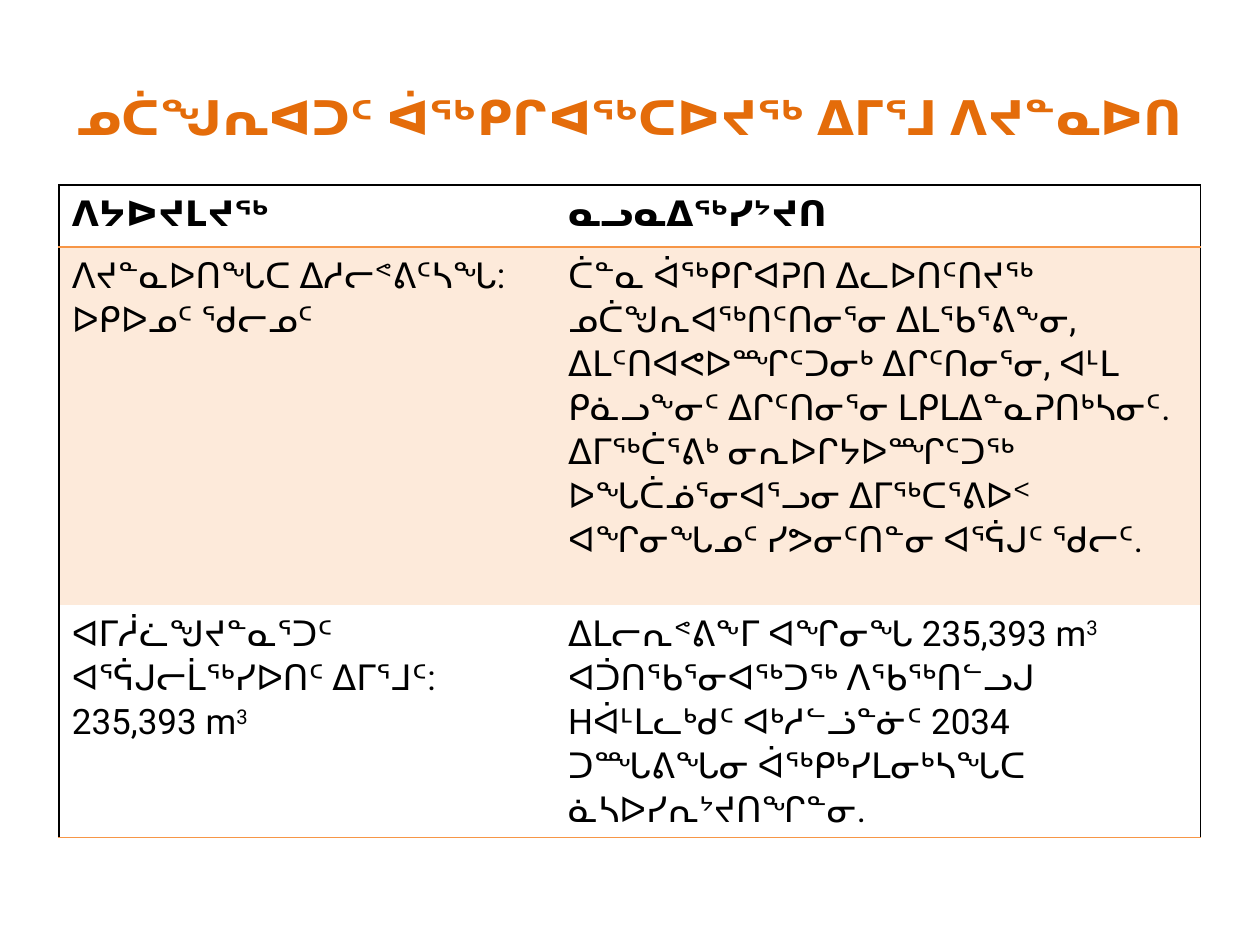
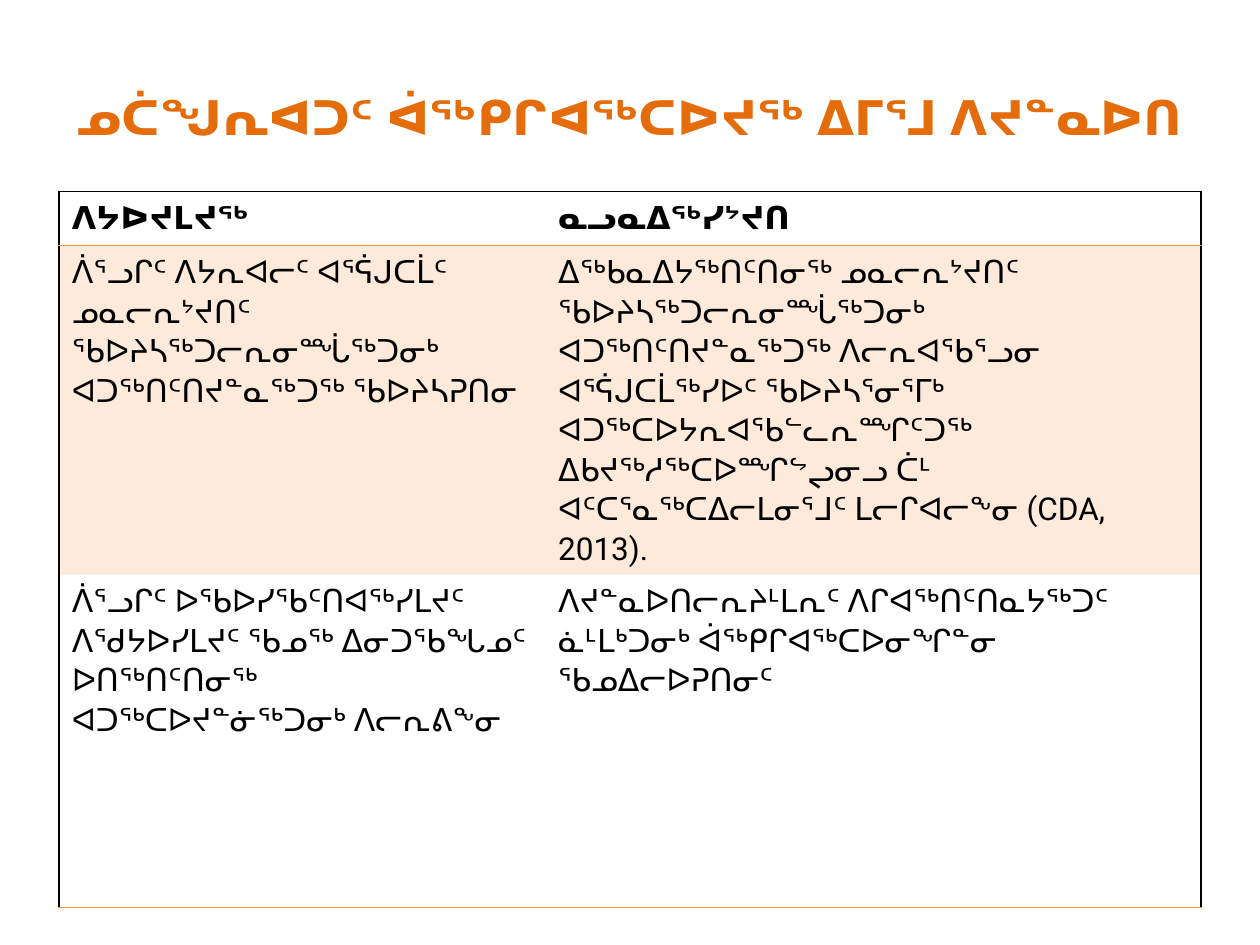
from lxml.etree import SubElement
from pptx import Presentation
from pptx.dml.color import RGBColor
from pptx.enum.text import MSO_ANCHOR, MSO_AUTO_SIZE, PP_ALIGN
from pptx.oxml import parse_xml
from pptx.oxml.ns import nsdecls, qn
from pptx.util import Inches, Pt

# Content: in a cell, every second part is superscript
TITLE = "ᓄᑖᖑᕆᐊᑐᑦ ᐋᖅᑭᒋᐊᖅᑕᐅᔪᖅ ᐃᒥᕐᒧ ᐱᔪᓐᓇᐅᑎ"
HEADER = (["ᐱᔭᐅᔪᒪᔪᖅ"], ["ᓇᓗᓇᐃᖅᓯᔾᔪᑎ"])
SLIDES = [
    {
        "top": 1.47, "size": 20, "cols": (3.94, 5.12), "heights": (0.49, 2.84, 1.79),
        "rows": [
            (["ᐱᔪᓐᓇᐅᑎᖓᑕ ᐃᓱᓕᕝᕕᑦᓴᖓ: ᐅᑭᐅᓄᑦ ᖁᓕᓄᑦ"],
             ["ᑖᓐᓇ ᐋᖅᑭᒋᐊᕈᑎ ᐃᓚᐅᑎᑦᑎᔪᖅ ᓄᑖᖑᕆᐊᖅᑎᑦᑎᓂᕐᓂ ᐃᒪᖃᕐᕕᖕᓂ, "
              "ᐃᒪᑦᑎᐊᕙᐅᙱᑦᑐᓂᒃ ᐃᒋᑦᑎᓂᕐᓂ, ᐊᒻᒪ ᑭᓈᓗᖕᓂᑦ ᐃᒋᑦᑎᓂᕐᓂ "
              "ᒪᑭᒪᐃᓐᓇᕈᑎᒃᓴᓂᑦ. ᐃᒥᖅᑖᕐᕕᒃ ᓂᕆᐅᒋᔭᐅᙱᑦᑐᖅ ᐅᖓᑖᓅᕐᓂᐊᕐᓗᓂ "
              "ᐃᒥᖅᑕᕐᕕᐅᑉ ᐊᖏᓂᖓᓄᑦ ᓯᕗᓂᑦᑎᓐᓂ ᐊᕐᕌᒍᑦ ᖁᓕᑦ."]),
            (["ᐊᒥᓲᓛᖑᔪᓐᓇᕐᑐᑦ ᐊᕐᕌᒍᓕᒫᖅᓯᐅᑎᑦ ᐃᒥᕐᒧᑦ: 235,393 m", "3"],
             ["ᐃᒪᓕᕆᕝᕕᖕᒥ ᐊᖏᓂᖓ 235,393 m", "3",
              " ᐊᑑᑎᖃᕐᓂᐊᖅᑐᖅ ᐱᖃᖅᑎᓪᓗᒍ Hᐋᒻᒪᓚᒃᑯᑦ ᐊᒃᓱᓪᓘᓐᓃᑦ 2034 "
              "ᑐᙵᕕᖓᓂ ᐋᖅᑭᒃᓯᒪᓂᒃᓴᖓᑕ ᓈᓴᐅᓯᕆᔾᔪᑎᖏᓐᓂ."]),
        ],
    },
    {
        "top": 1.52, "size": 18, "cols": (3.86, 5.2), "heights": (0.43, 1.76, 2.64),
        "rows": [
            (["ᐲᕐᓗᒋᑦ ᐱᔭᕆᐊᓕᑦ ᐊᕐᕌᒍᑕᒫᑦ ᓄᓇᓕᕆᔾᔪᑎᑦ ᖃᐅᔨᓴᖅᑐᓕᕆᓂᙶᖅᑐᓂᒃ "
              "ᐊᑐᖅᑎᑦᑎᔪᓐᓇᖅᑐᖅ ᖃᐅᔨᓴᕈᑎᓂ"],
             ["ᐃᖅᑲᓇᐃᔭᖅᑎᑦᑎᓂᖅ ᓄᓇᓕᕆᔾᔪᑎᑦ ᖃᐅᔨᓴᖅᑐᓕᕆᓂᙶᖅᑐᓂᒃ "
              "ᐊᑐᖅᑎᑦᑎᔪᓐᓇᖅᑐᖅ ᐱᓕᕆᐊᖃᕐᓗᓂ ᐊᕐᕌᒍᑕᒫᖅᓯᐅᑦ ᖃᐅᔨᓴᕐᓂᕐᒥᒃ "
              "ᐊᑐᖅᑕᐅᔭᕆᐊᖃᓪᓚᕆᙱᑦᑐᖅ ᐃᑲᔪᖅᓱᖅᑕᐅᙱᖦᖢᓂᓗ ᑖᒻ "
              "ᐊᑦᑕᕐᓇᖅᑕᐃᓕᒪᓂᕐᒧᑦ ᒪᓕᒋᐊᓕᖕᓂ (CDA, 2013)."]),
            (["ᐲᕐᓗᒋᑦ ᐅᖃᐅᓯᖃᑦᑎᐊᖅᓯᒪᔪᑦ ᐱᖁᔭᐅᓯᒪᔪᑦ ᖃᓄᖅ ᐃᓂᑐᖃᖓᓄᑦ "
              "ᐅᑎᖅᑎᑦᑎᓂᖅ ᐊᑐᖅᑕᐅᔪᓐᓃᖅᑐᓂᒃ ᐱᓕᕆᕕᖕᓂ"],
             ["ᐱᔪᓐᓇᐅᑎᓕᕆᔨᒻᒪᕆᑦ ᐱᒋᐊᖅᑎᑦᑎᓇᔭᖅᑐᑦ ᓈᒻᒪᒃᑐᓂᒃ "
              "ᐋᖅᑭᒋᐊᖅᑕᐅᓂᖏᓐᓂ ᖃᓄᐃᓕᐅᕈᑎᓂᑦ"]),
        ],
    },
]

# Shared look
BLACK, ORANGE, TITLE_COLOR = "000000", "F79646", "E46C0A"
BAND_ALPHA = 20
LEFT = 0.47
PLAIN_STYLE = "{2D5ABB26-0587-4C30-8999-92F81FD0307C}"
TITLE_FONT = {"name": "Arial", "size": Pt(27.3), "bold": True}
CELL_FORMAT = {"line_spacing": 1.07, "space_after": Pt(8)}


def color(hex_text):
    return RGBColor.from_string(hex_text)


def apply(target, values):
    for name, value in values.items():
        setattr(target, name, value)


def add_run(p, text, font, hex_text):
    r = p.add_run()
    r.text = text
    apply(r.font, font)
    r.font.color.rgb = color(hex_text)
    return r


def add_title(s):
    sp = s.shapes.title
    apply(sp, {"left": 0, "top": Inches(0.3), "width": Inches(10), "height": Inches(1.25)})
    tf = sp.text_frame
    apply(tf, {"word_wrap": True, "auto_size": MSO_AUTO_SIZE.NONE,
               "vertical_anchor": MSO_ANCHOR.MIDDLE})
    p = tf.paragraphs[0]
    p.alignment = PP_ALIGN.CENTER
    add_run(p, TITLE, TITLE_FONT, TITLE_COLOR)


def set_borders(cell, edges):
    """Draw the edges named in the dict and clear the other ones."""
    tc_pr = cell._tc.get_or_add_tcPr()
    for i, side in enumerate("LRTB"):
        fill = "<a:noFill/>"
        if side in edges:
            fill = f'<a:solidFill><a:srgbClr val="{edges[side]}"/></a:solidFill>'
        tc_pr.insert(i, parse_xml(
            f'<a:ln{side} {nsdecls("a")} w="{Pt(1)}">{fill}</a:ln{side}>'))


def fill_cell(cell, parts, size, header, band):
    p = cell.text_frame.paragraphs[0]
    apply(p, CELL_FORMAT)
    font = {"name": "Roboto", "size": Pt(size), "bold": header}
    for i, part in enumerate(parts):
        r = add_run(p, part, font, BLACK)
        if i % 2:
            r.font._element.set("baseline", "30000")
    if band:
        cell.fill.solid()
        cell.fill.fore_color.rgb = color(ORANGE)
        clr = cell._tc.tcPr.find(".//" + qn("a:srgbClr"))
        SubElement(clr, qn("a:alpha")).set("val", str(BAND_ALPHA * 1000))
    else:
        cell.fill.background()


def add_grid(s, top, size, cols, heights, rows):
    rows = [HEADER, *rows]
    frame = s.shapes.add_table(len(rows), len(cols), Inches(LEFT), Inches(top),
                               Inches(sum(cols)), Inches(sum(heights)))
    table = frame.table
    apply(table, {"first_row": False, "horz_banding": False})
    table._tbl.tblPr.find(qn("a:tableStyleId")).text = PLAIN_STYLE
    for col, width in zip(table.columns, cols):
        col.width = Inches(width)
    for row, height in zip(table.rows, heights):
        row.height = Inches(height)
    last = len(rows) - 1
    for i, row in enumerate(rows):
        for j, parts in enumerate(row):
            cell = table.cell(i, j)
            fill_cell(cell, parts, size, header=i == 0, band=i == 1)
            # Black frame, orange rules under the header and the last row
            edges = {"R" if j else "L": BLACK}
            if i == 0:
                edges["T"] = BLACK
            if i in (0, last):
                edges["B"] = ORANGE
            if i == 1:
                edges["T"] = ORANGE
            set_borders(cell, edges)


def main():
    prs = Presentation()
    prs.slide_width, prs.slide_height = Inches(10), Inches(7.5)
    for content in SLIDES:
        s = prs.slides.add_slide(prs.slide_layouts[5])
        add_title(s)
        add_grid(s, **content)
    prs.save("out.pptx")


if __name__ == "__main__":
    main()
